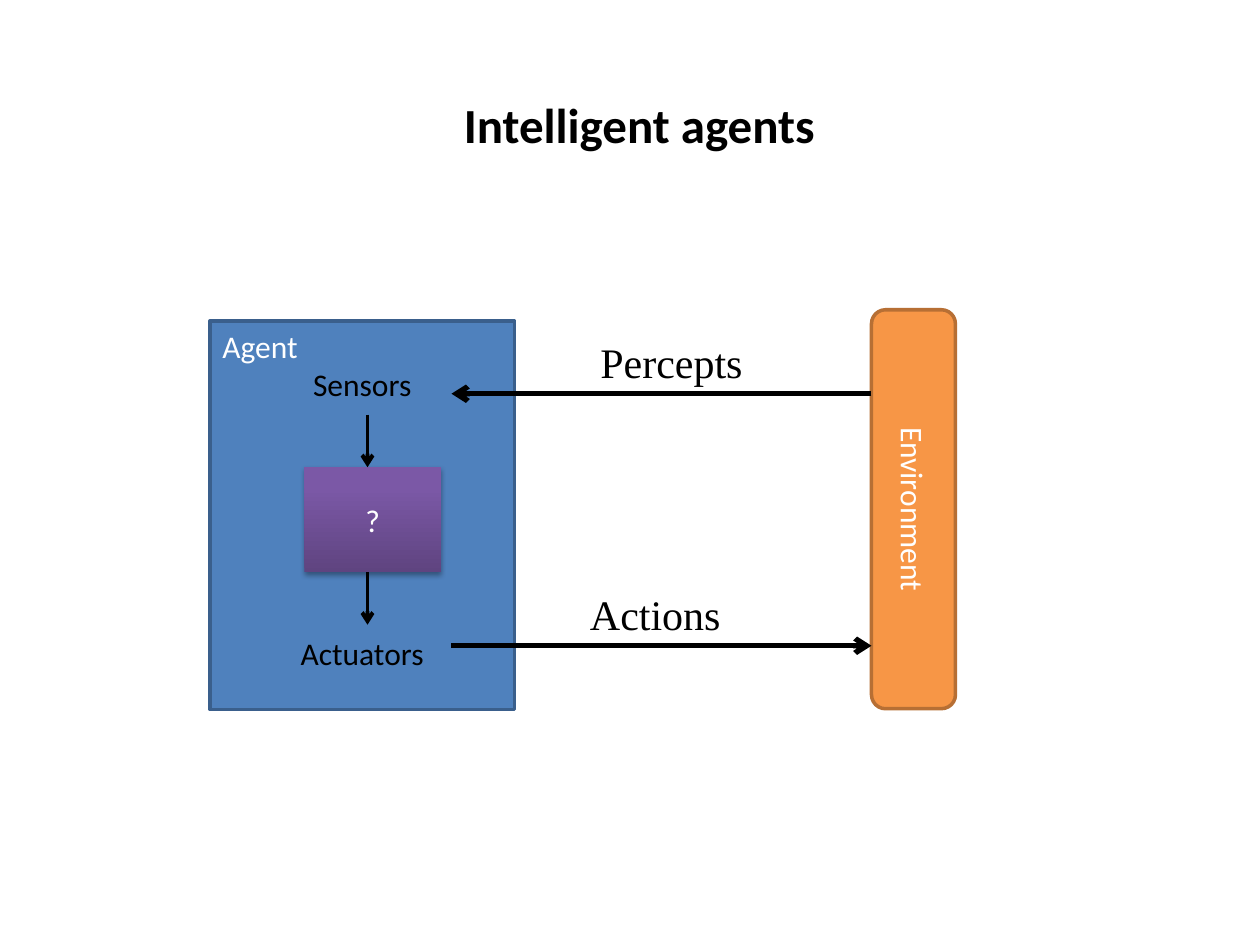
from copy import deepcopy
from dataclasses import dataclass

from lxml import etree
from pptx import Presentation
from pptx.dml.color import RGBColor
from pptx.enum.shapes import MSO_CONNECTOR, MSO_SHAPE
from pptx.enum.text import MSO_ANCHOR, PP_ALIGN
from pptx.oxml.ns import qn
from pptx.util import Pt

RECTANGLE, ROUNDED = MSO_SHAPE.RECTANGLE, MSO_SHAPE.ROUNDED_RECTANGLE
STRAIGHT = MSO_CONNECTOR.STRAIGHT
LEFT, CENTER = PP_ALIGN.LEFT, PP_ALIGN.CENTER
TOP, MIDDLE = MSO_ANCHOR.TOP, MSO_ANCHOR.MIDDLE


@dataclass(frozen=True)
class Theme:
    """Colours, fonts and type sizes of the slide."""
    black: str = "000000"
    white: str = "FFFFFF"
    agent: str = "4F81BD"
    agent_edge: str = "3A5F8C"
    environment: str = "F79646"
    environment_edge: str = "B76F34"
    program: tuple = ((0, "5F4480"), (0.8, "7B58A6"), (1, "7C57A8"))
    sans: str = "Calibri"
    serif: str = "Times New Roman"
    title: int = 28
    flow: int = 24
    body: int = 18


THEME = Theme()


def rgb(value):
    """Turn a hex string into a colour."""
    return RGBColor.from_string(value)


def write(paragraph, text, color, size=THEME.body, font=THEME.sans,
          align=LEFT, bold=False):
    """Add one styled run to a paragraph."""
    paragraph.alignment = align
    run = paragraph.add_run()
    run.text = text
    run.font.name, run.font.size, run.font.bold = font, Pt(size), bold
    run.font.color.rgb = rgb(color)


def add_label(slide, box, text, size, font, wrap=True, bold=False):
    """Add a one-line text box."""
    frame = slide.shapes.add_textbox(*map(Pt, box)).text_frame
    frame.word_wrap = wrap
    write(frame.paragraphs[0], text, THEME.black, size, font, bold=bold)


def add_block(slide, kind, box, anchor, fill=None, edge=None):
    """Add a shape without shadow, with an optional flat fill and edge."""
    block = slide.shapes.add_shape(kind, *map(Pt, box))
    block.shadow.inherit = False
    block.text_frame.vertical_anchor = anchor
    if fill:
        block.fill.solid()
        block.fill.fore_color.rgb = rgb(fill)
    if edge:
        block.line.color.rgb = rgb(edge)
        block.line.width = Pt(2)
    else:
        block.line.fill.background()
    return block


def add_arrow(slide, start, end, width):
    """Add a black line with an open arrowhead at its end."""
    arrow = slide.shapes.add_connector(STRAIGHT, *map(Pt, (*start, *end)))
    arrow.line.color.rgb = rgb(THEME.black)
    arrow.line.width = Pt(width)
    etree.SubElement(arrow.line._get_or_add_ln(), qn("a:tailEnd"), type="arrow")
    etree.SubElement(arrow._element.spPr, qn("a:effectLst"))


def add_program(slide, box):
    """Add the unknown agent program with its gradient and soft shadow."""
    program = add_block(slide, RECTANGLE, box, MIDDLE)
    program.fill.gradient()
    program.fill.gradient_angle = 90
    properties = program._element.spPr
    stops = properties.find(".//" + qn("a:gsLst"))
    stops.append(deepcopy(stops[-1]))
    for stop, (position, color) in zip(program.fill.gradient_stops, THEME.program):
        stop.position = position
        stop.color.rgb = rgb(color)
    shadow = etree.SubElement(
        properties.find(qn("a:effectLst")), qn("a:outerShdw"),
        blurRad=str(Pt(3.1)), dist=str(Pt(1.8)), dir="5400000", rotWithShape="0")
    shade = etree.SubElement(shadow, qn("a:srgbClr"), val=THEME.black)
    etree.SubElement(shade, qn("a:alpha"), val="35000")
    write(program.text_frame.paragraphs[0], "?", THEME.white, align=CENTER)


def add_agent(slide, box):
    """Add the agent: sensors, program and actuators from top to bottom."""
    left, top, _, _ = box
    agent = add_block(slide, RECTANGLE, box, TOP, THEME.agent, THEME.agent_edge)
    frame = agent.text_frame
    write(frame.paragraphs[0], "Agent", THEME.white)
    for part, gap in (("Sensors", 0), ("Actuators", 132)):
        paragraph = frame.add_paragraph()
        paragraph.space_before = Pt(gap)
        write(paragraph, part, THEME.black, align=CENTER)
    program_top, program_height, step = top + 83.5, 60, 30
    add_program(slide, (left + 54, program_top, 78, program_height))
    for start in (program_top - step, program_top + program_height):
        add_arrow(slide, (left + 90, start), (left + 90, start + step), 2.25)


def add_environment(slide, box):
    """Add the environment bar with its vertical name."""
    environment = add_block(slide, ROUNDED, box, MIDDLE,
                            THEME.environment, THEME.environment_edge)
    frame = environment.text_frame
    frame._txBody.bodyPr.set("vert", "vert")
    write(frame.paragraphs[0], "Environment", THEME.white, align=CENTER)


def add_flows(slide, box):
    """Add percepts along the top of the box and actions along its bottom."""
    left, top, width, height = box
    right, bottom = left + width, top + height
    add_arrow(slide, (right, top), (left, top), 3)
    add_arrow(slide, (left, bottom), (right, bottom), 3)
    for text, offset, line, span in (("Percepts", 78, top, 132),
                                     ("Actions", 72, bottom, 120)):
        add_label(slide, (left + offset, line - 36, span, 36), text,
                  THEME.flow, THEME.serif)


def main():
    """Build the slide and save it."""
    deck = Presentation()
    deck.slide_width, deck.slide_height = Pt(720), Pt(540)
    slide = deck.slides.add_slide(deck.slide_layouts[6])
    add_label(slide, (258, 50.4, 217.4, 41), "Intelligent agents",
              THEME.title, THEME.sans, wrap=False, bold=True)
    add_agent(slide, (120, 183.5, 174, 222))
    add_environment(slide, (498, 177, 48, 228))
    add_flows(slide, (258, 225, 240, 144))
    deck.save("out.pptx")


if __name__ == "__main__":
    main()
